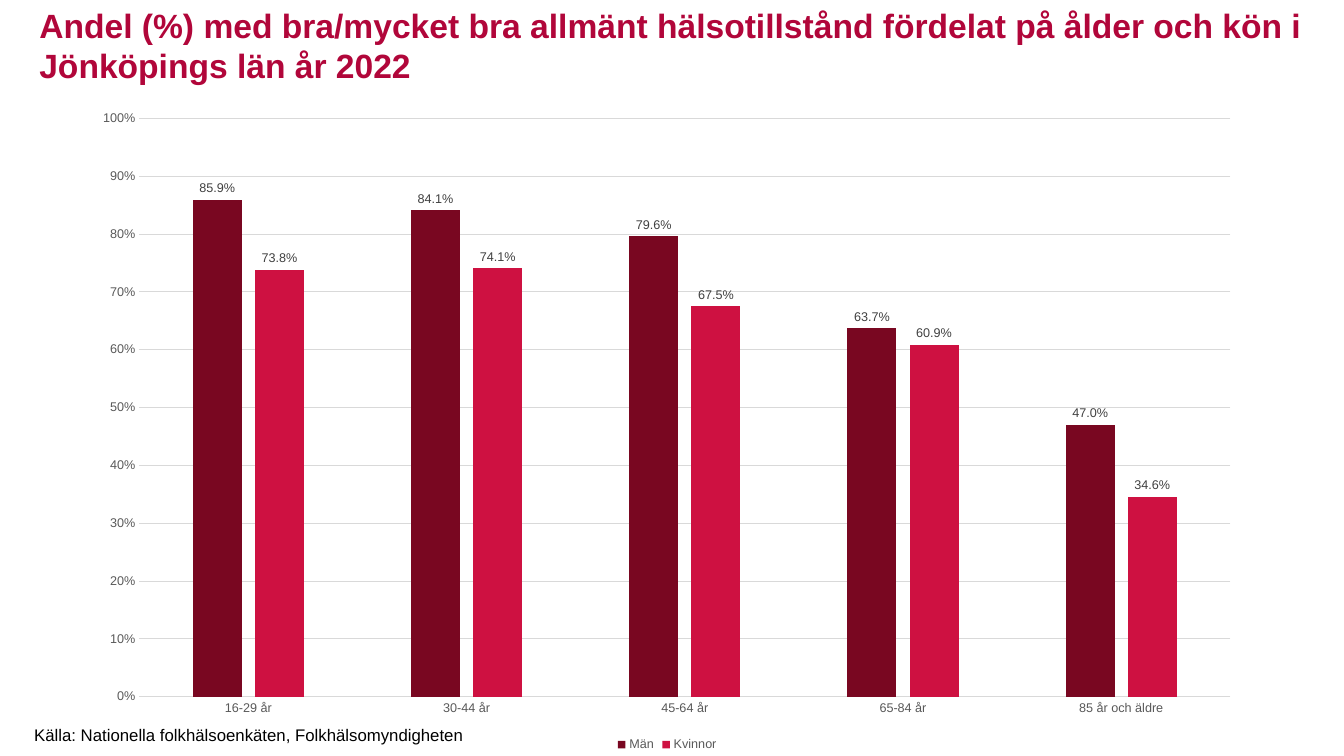
import pptx
import pptx.chart.data
import pptx.dml.color
import pptx.enum.chart
import pptx.enum.text
import pptx.util
from lxml import etree

RGBColor = pptx.dml.color.RGBColor
Pt = pptx.util.Pt

TITLE_RED = RGBColor(0xB1, 0x06, 0x3A)
MEN_RED = RGBColor(0x79, 0x07, 0x21)
WOMEN_RED = RGBColor(0xCE, 0x11, 0x41)
GRID_GREY = RGBColor(0xD9, 0xD9, 0xD9)
AXIS_GREY = RGBColor(0x59, 0x59, 0x59)
LABEL_GREY = RGBColor(0x40, 0x40, 0x40)
BLACK = RGBColor(0, 0, 0)

AGE_GROUPS = ["16-29 år", "30-44 år", "45-64 år", "65-84 år", "85 år och äldre"]
HEALTH_SERIES = [
    ("Män", [0.859, 0.841, 0.796, 0.637, 0.47], MEN_RED),
    ("Kvinnor", [0.738, 0.741, 0.675, 0.609, 0.346], WOMEN_RED),
]
PLOT_LAYOUT = {
    "layoutTarget": "inner", "xMode": "edge", "yMode": "edge",
    "x": "0.05", "y": "0.03", "w": "0.93", "h": "0.88",
}


class SlideBuilder:
    """Holds the text style and the current slide."""

    font_name = "Arial"

    def __init__(self, slide):
        self.slide = slide

    def style_font(self, font, size, color, bold=False):
        font.name = self.font_name
        font.size = Pt(size)
        font.bold = bold
        font.color.rgb = color

    def title(self, text, left, top, width, height):
        shape = self.slide.shapes.title
        shape.left, shape.top = Pt(left), Pt(top)
        shape.width, shape.height = Pt(width), Pt(height)
        frame = shape.text_frame
        frame.text = text
        frame.word_wrap = True
        frame.auto_size = pptx.enum.text.MSO_AUTO_SIZE.NONE
        frame.vertical_anchor = pptx.enum.text.MSO_ANCHOR.TOP
        paragraph = frame.paragraphs[0]
        paragraph.alignment = pptx.enum.text.PP_ALIGN.LEFT
        self.style_font(paragraph.runs[0].font, 24, TITLE_RED, bold=True)

    def text(self, text, left, top, width, height):
        shape = self.slide.shapes.add_textbox(Pt(left), Pt(top), Pt(width), Pt(height))
        frame = shape.text_frame
        frame.text = text
        frame.word_wrap = False
        frame.auto_size = pptx.enum.text.MSO_AUTO_SIZE.SHAPE_TO_FIT_TEXT
        self.style_font(frame.paragraphs[0].runs[0].font, 12, BLACK)

    def column_chart(self, categories, series_rows, left, top, width, height):
        data = pptx.chart.data.CategoryChartData(number_format="0.0%")
        data.categories = categories
        for name, values, _ in series_rows:
            data.add_series(name, values)
        chart = self.slide.shapes.add_chart(
            pptx.enum.chart.XL_CHART_TYPE.COLUMN_CLUSTERED,
            Pt(left), Pt(top), Pt(width), Pt(height), data).chart
        self.style_font(chart.font, 10, BLACK)
        chart.has_title = False

        # Columns and value labels
        plot = chart.plots[0]
        plot.gap_width = 219
        plot.overlap = -27
        plot.vary_by_categories = False
        for series, (_, _, color) in zip(plot.series, series_rows):
            series.format.fill.solid()
            series.format.fill.fore_color.rgb = color
            labels = series.data_labels
            labels.show_value = True
            labels.number_format = "0.0%"
            labels.number_format_is_linked = False
            labels.position = pptx.enum.chart.XL_LABEL_POSITION.OUTSIDE_END
            self.style_font(labels.font, 9, LABEL_GREY)

        # Axes and gridlines
        for axis in (chart.category_axis, chart.value_axis):
            axis.major_tick_mark = pptx.enum.chart.XL_TICK_MARK.NONE
            axis.minor_tick_mark = pptx.enum.chart.XL_TICK_MARK.NONE
            self.style_font(axis.tick_labels.font, 9, AXIS_GREY)
        value_axis = chart.value_axis
        value_axis.minimum_scale = 0
        value_axis.maximum_scale = 1
        value_axis.major_unit = 0.1
        value_axis.tick_labels.number_format = "0%"
        value_axis.tick_labels.number_format_is_linked = False
        value_axis.format.line.fill.background()
        for line in (chart.category_axis.format.line,
                     value_axis.major_gridlines.format.line):
            line.color.rgb = GRID_GREY
            line.width = Pt(0.75)

        # Legend
        chart.has_legend = True
        chart.legend.position = pptx.enum.chart.XL_LEGEND_POSITION.BOTTOM
        chart.legend.include_in_layout = False
        self.style_font(chart.legend.font, 9, AXIS_GREY)
        self.place_plot(chart)

    def place_plot(self, chart):
        qn = pptx.oxml.ns.qn
        plot_area = chart.element.find(".//" + qn("c:plotArea"))
        for old_layout in plot_area.findall(qn("c:layout")):
            plot_area.remove(old_layout)
        layout = etree.Element(qn("c:layout"))
        manual = etree.SubElement(layout, qn("c:manualLayout"))
        for name, value in PLOT_LAYOUT.items():
            etree.SubElement(manual, qn("c:" + name)).set("val", value)
        plot_area.insert(0, layout)


def main():
    presentation = pptx.Presentation()
    presentation.slide_width = Pt(960)
    presentation.slide_height = Pt(540)
    title_only = presentation.slide_layouts[5]
    builder = SlideBuilder(presentation.slides.add_slide(title_only))

    # Heading
    builder.title("Andel (%) med bra/mycket bra allmänt hälsotillstånd fördelat "
                  "på ålder och kön i Jönköpings län år 2022", 20.88, 0, 960, 51)

    # Health by age and sex
    builder.column_chart(AGE_GROUPS, HEALTH_SERIES, 57.6, 70.56, 838, 469.44)

    # Source line
    builder.text("Källa: Nationella folkhälsoenkäten, Folkhälsomyndigheten",
                 17.28, 514, 323.3, 21.6)

    presentation.save("out.pptx")


if __name__ == "__main__":
    main()
